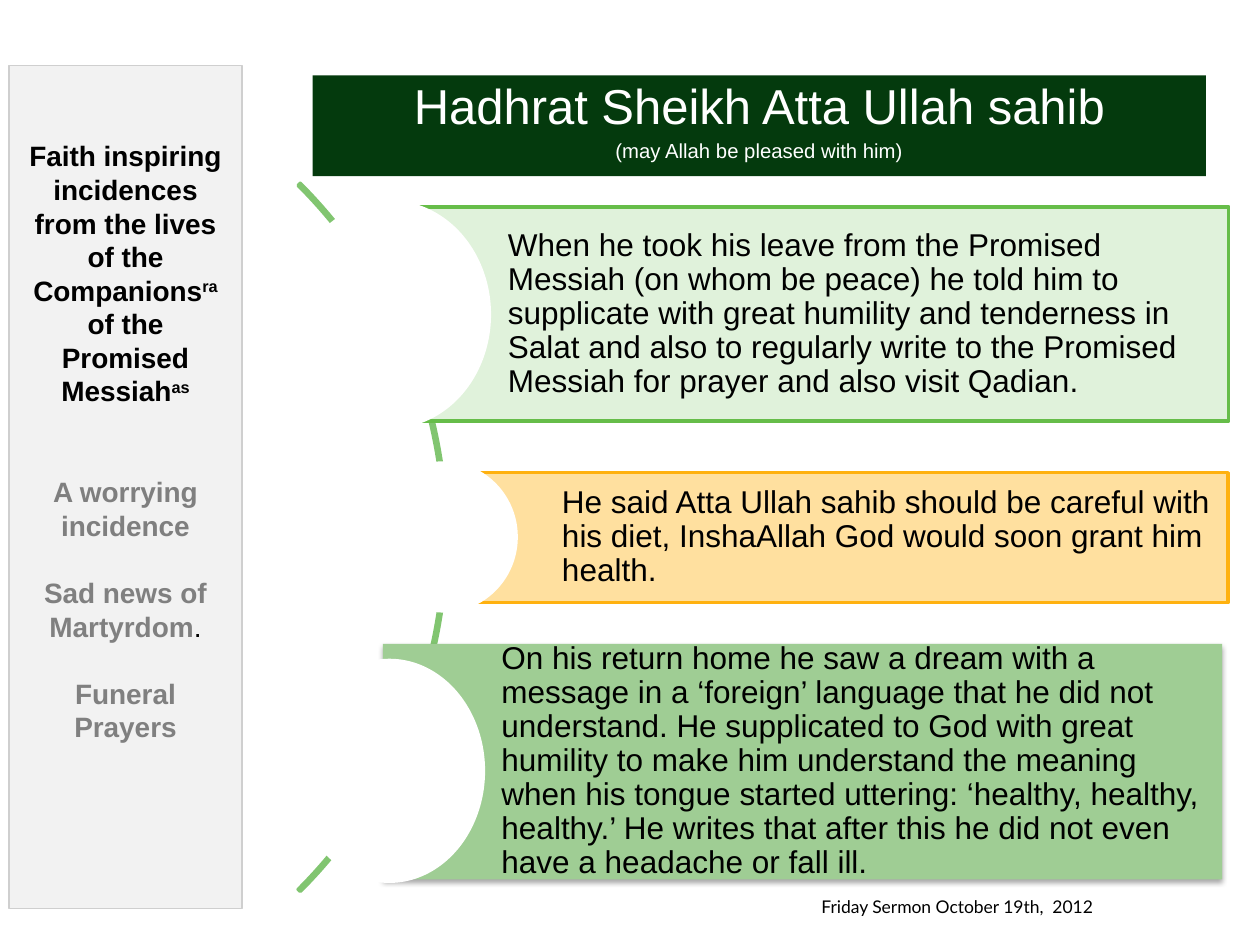
"""Build the sermon slide with a sidebar, a title bar and three points."""
from dataclasses import dataclass

from lxml import etree
from pptx import Presentation
from pptx import util as u
from pptx.dml.color import RGBColor
from pptx.enum import shapes, text
from pptx.oxml import ns

Box = tuple[float, float, float, float]
KIND = shapes.MSO_SHAPE
MID = text.MSO_ANCHOR.MIDDLE
TOP = text.MSO_ANCHOR.TOP
MAIN = ns.nsdecls("a")
BLANK = 19.2
GREY = "808080"


@dataclass
class Point:
    box: Box
    disc: Box
    words: str
    fill: str
    line: str | None = None


@dataclass
class Note:
    runs: list[tuple[str, dict]]
    gap: float = 0


POINTS = [
    Point((7.85, 4.17, 16.92, 4.32), (5.84, 4.04, 4.06, 4.6),
          "When he took his leave from the Promised Messiah (on whom be peace) he told him "
          "to supplicate with great humility and tenderness in Salat and also to regularly "
          "write to the Promised Messiah for prayer and also visit Qadian.",
          "E0F2DB", "66BD49"),
    Point((8.94, 9.53, 15.82, 2.62), (7.44, 9.3, 3, 3.05),
          "He said Atta Ullah sahib should be careful with his diet, InshaAllah God would "
          "soon grant him health.",
          "FFE09F", "FFB10F"),
    Point((7.72, 12.98, 16.92, 4.75), (5.92, 13.28, 3.86, 4.52),
          "On his return home he saw a dream with a message in a ‘foreign’ language that he "
          "did not understand. He supplicated to God with great humility to make him "
          "understand the meaning when his tongue started uttering: ‘healthy, healthy, "
          "healthy.’ He writes that after this he did not even have a headache or fall ill.",
          "9FCD94"),
]

NOTES = [
    Note([("Faith inspiring incidences from the lives of the Companions", {}),
          ("ra", {"lift": 30}), (" of the Promised Messiah", {}), ("as", {"lift": 30})]),
    Note([("A worrying incidence", {"hue": "7F7F7F"})], 2 * BLANK),
    Note([("Sad news of Martyrdom", {"hue": GREY}), (".", {"bold": False})], BLANK),
    Note([("Funeral Prayers", {"hue": GREY})], BLANK),
]


def paint(part, hue: str | None) -> None:
    """Give a fill or a line one solid colour, or none."""
    fill = getattr(part, "fill", part)
    if hue is None:
        fill.background()
    else:
        fill.solid()
        fill.fore_color.rgb = RGBColor.from_string(hue)


def write(para, words: str, *, size: float = 18, hue: str = "000000",
          face: str = "Arial", bold: bool = False, lift: int = 0) -> None:
    """Add one formatted run to a paragraph."""
    run = para.add_run()
    run.text = words
    font = run.font
    font.size, font.name, font.bold = u.Pt(size), face, bold
    paint(font.fill, hue)
    if lift:
        run._r.get_or_add_rPr().set("baseline", str(lift * 1000))


def place(shape, box: Box) -> None:
    """Move and size a shape by its box in centimetres."""
    shape.left, shape.top, shape.width, shape.height = map(u.Cm, box)


def frame(shape, anchor, left: float = 0.25, top: float = 0.13, right: float = 0.25):
    """Set up the text frame of a shape and return it."""
    area = shape.text_frame
    area.word_wrap = True
    area.auto_size = text.MSO_AUTO_SIZE.NONE
    area.vertical_anchor = anchor
    area.margin_left, area.margin_top = u.Cm(left), u.Cm(top)
    area.margin_right, area.margin_bottom = u.Cm(right), u.Cm(0.13)
    return area


def draw(slide, kind, box: Box, fill: str | None = None,
         line: str | None = None, width: float = 2):
    """Draw a flat preset shape."""
    shape = slide.shapes.add_shape(kind, *map(u.Cm, box))
    shape.shadow.inherit = False
    paint(shape.fill, fill)
    paint(shape.line, line)
    if line:
        shape.line.width = u.Pt(width)
    return shape


def shade(shape) -> None:
    """Add a soft shadow below a shape."""
    glow = etree.fromstring(
        f'<a:outerShdw {MAIN} blurRad="{u.Pt(3.1)}" dist="{u.Pt(1.8)}" dir="5400000" '
        'rotWithShape="0"><a:srgbClr val="000000"><a:alpha val="35000"/>'
        '</a:srgbClr></a:outerShdw>')
    shape._element.spPr.find(ns.qn("a:effectLst")).append(glow)


def show(slide, point: Point) -> None:
    """Draw one point with its white disc."""
    rect = draw(slide, KIND.RECTANGLE, point.box, point.fill, point.line)
    if point.line is None:
        shade(rect)
    para = frame(rect, MID, left=2.39, right=0.13).paragraphs[0]
    para.alignment = text.PP_ALIGN.LEFT
    para.line_spacing = 0.9
    write(para, point.words)
    draw(slide, KIND.OVAL, point.disc, "FFFFFF")


def head(shape) -> None:
    """Fill the title bar."""
    place(shape, (6.3, 1.52, 18.01, 2.03))
    paint(shape.fill, "043A0D")
    area = frame(shape, MID)
    rows = [("Hadhrat Sheikh Atta Ullah sahib", {"size": 28}),
            ("(may Allah be pleased with him)", {"size": 20, "lift": 30})]
    for i, (words, form) in enumerate(rows):
        para = area.add_paragraph() if i else area.paragraphs[0]
        para.alignment = text.PP_ALIGN.CENTER
        write(para, words, hue="FFFFFF", **form)


def side(shape) -> None:
    """Fill the sidebar list."""
    place(shape, (0.18, 1.32, 4.7, 16.99))
    paint(shape.fill, "F2F2F2")
    paint(shape.line, "CFCFCF")
    shape.line.width = u.Pt(0.75)
    area = frame(shape, TOP, top=1.48)
    for i, note in enumerate(NOTES):
        para = area.add_paragraph() if i else area.paragraphs[0]
        props = para._p.get_or_add_pPr()
        props.set("marL", "0")
        props.set("indent", "0")
        etree.SubElement(props, ns.qn("a:buNone"))
        para.alignment = text.PP_ALIGN.CENTER
        para.space_before = u.Pt(note.gap)
        for words, form in note.runs:
            write(para, words, **{"size": 16, "bold": True, **form})


def main() -> None:
    """Build and save the slide."""
    deck = Presentation()
    deck.slide_width, deck.slide_height = u.Cm(25.4), u.Cm(19.05)
    slide = deck.slides.add_slide(deck.slide_layouts[1])
    head(slide.shapes.title)
    side(slide.placeholders[1])
    arc = draw(slide, KIND.BLOCK_ARC, (-11.18, 0.74, 20.19, 20.19), line="81C570")
    for i, value in enumerate((189, 27, 0.003)):
        arc.adjustments[i] = value
    for point in POINTS:
        show(slide, point)
    date = slide.shapes.add_textbox(*map(u.Cm, (16.31, 17.93, 6.1, 0.69)))
    area = frame(date, TOP)
    area.word_wrap = False
    write(area.paragraphs[0], "Friday Sermon October 19th,  2012", size=10, face="Lato")
    deck.save("out.pptx")


if __name__ == "__main__":
    main()
